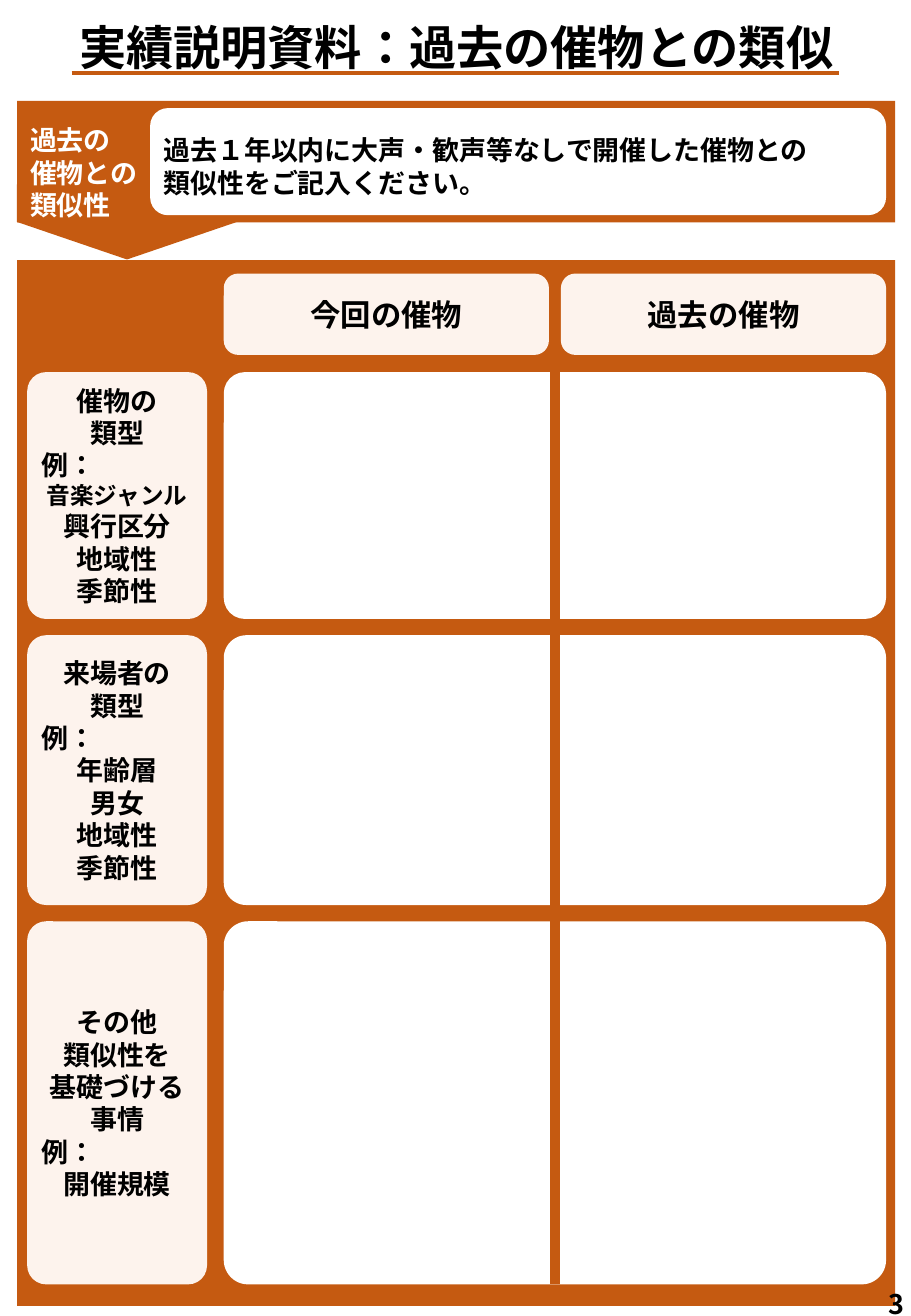
from lxml import etree
from pptx import Presentation
from pptx.dml.color import RGBColor
from pptx.enum.lang import MSO_LANGUAGE_ID
from pptx.enum.shapes import MSO_CONNECTOR, MSO_SHAPE
from pptx.enum.text import MSO_ANCHOR, MSO_AUTO_SIZE, PP_ALIGN
from pptx.oxml.ns import qn
from pptx.util import Cm, Pt

TITLE = "実績説明資料：過去の催物との類似"
BANNER_LABEL = ["過去の", "催物との", "類似性"]
BANNER_TEXT = ["過去１年以内に大声・歓声等なしで開催した催物との", "類似性をご記入ください。"]
HEADERS = ["今回の催物", "過去の催物"]
EXAMPLE = "例："
ROWS = [
    (5.16, 0.086, ["催物の", "類型", EXAMPLE, "音楽ジャンル", "興行区分", "地域性", "季節性"]),
    (5.64, 0.084, ["来場者の", "類型", EXAMPLE, "年齢層", "男女", "地域性", "季節性"]),
    (7.59, 0.067, ["その他", "類似性を", "基礎づける事情", EXAMPLE, "開催規模"]),
]
SMALLER = {"音楽ジャンル": 14}
PAGE = "3"

FONT = "Noto Sans CJK JP"
JAPANESE = MSO_LANGUAGE_ID.JAPANESE
ORANGE = RGBColor(0xC5, 0x5A, 0x11)
CREAM = RGBColor(0xFD, 0xF3, 0xED)
WHITE = RGBColor(0xFF, 0xFF, 0xFF)
BLACK = RGBColor(0, 0, 0)
RECT, ROUND, PENTAGON = MSO_SHAPE.RECTANGLE, MSO_SHAPE.ROUNDED_RECTANGLE, MSO_SHAPE.PENTAGON
STRAIGHT = MSO_CONNECTOR.STRAIGHT
NO_AUTOFIT = MSO_AUTO_SIZE.NONE
LEFT, CENTER = PP_ALIGN.LEFT, PP_ALIGN.CENTER
TOP, MIDDLE = MSO_ANCHOR.TOP, MSO_ANCHOR.MIDDLE

PANEL_X, PANEL_W = 0.36, 18.36
LABEL_X, LABEL_W = 0.57, 3.76
ANSWER_X, COLUMN_W, COLUMN_GAP = 4.68, 6.8, 0.25
ANSWER_W = 2 * COLUMN_W + COLUMN_GAP
ROWS_Y, ROW_GAP = 7.78, 0.34

prs = Presentation()
prs.slide_width, prs.slide_height = Cm(19.05), Cm(27.51)
s = prs.slides.add_slide(prs.slide_layouts[5])


def write(sp, lines, size=16, color=BLACK, align=LEFT, anchor=TOP, side=0.25, edge=0.13):
    tf = sp.text_frame
    tf.word_wrap = True
    tf.auto_size = NO_AUTOFIT
    tf.vertical_anchor = anchor
    tf.margin_left = Cm(side)
    tf.margin_right = Cm(min(side, 0.18))
    tf.margin_top = tf.margin_bottom = Cm(edge)
    for i, line in enumerate(lines):
        p = tf.paragraphs[0] if i == 0 else tf.add_paragraph()
        p.alignment = LEFT if line == EXAMPLE else align
        line_size = SMALLER.get(line, size)
        p.line_spacing = Pt(line_size * 1.2)
        r = p.add_run()
        r.text = line
        r.font.size, r.font.bold, r.font.name = Pt(line_size), True, FONT
        r.font.language_id = JAPANESE
        r.font.color.rgb = color
        ea = etree.SubElement(r._r.get_or_add_rPr(), qn("a:ea"))
        ea.set("typeface", FONT)


def block(kind, x, y, w, h, fill, adj=None):
    sp = s.shapes.add_shape(kind, Cm(x), Cm(y), Cm(w), Cm(h))
    sp.shadow.inherit = False
    sp.fill.solid()
    sp.fill.fore_color.rgb = fill
    sp.line.fill.background()
    if adj is not None:
        sp.adjustments[0] = adj
    return sp


def text_box(x, y, w, h):
    return s.shapes.add_textbox(Cm(x), Cm(y), Cm(w), Cm(h))


def rule(x1, y1, x2, y2, width):
    line = s.shapes.add_connector(STRAIGHT, Cm(x1), Cm(y1), Cm(x2), Cm(y2))
    line.line.color.rgb = ORANGE
    line.line.width = Pt(width)
    etree.SubElement(line._element.spPr, qn("a:effectLst"))


title = s.shapes.title
title.left, title.top, title.width, title.height = Cm(1.2), Cm(0.25), Cm(16.61), Cm(1.45)
write(title, [TITLE], size=28, align=CENTER)
rule(1.5, 1.52, 17.55, 1.52, 2.25)

block(PENTAGON, 1.87, 2.34, 1.57, 4.6, ORANGE).rotation = 90
block(RECT, PANEL_X, 2.11, PANEL_W, 2.54, ORANGE)
block(ROUND, 3.14, 2.26, 15.39, 2.24, WHITE)
write(text_box(0.38, 2.46, 2.9, 2.3), BANNER_LABEL, color=WHITE)
write(text_box(3.17, 2.67, 15.37, 1.63), BANNER_TEXT)

block(RECT, PANEL_X, 5.44, PANEL_W, 21.86, ORANGE)
for i, header in enumerate(HEADERS):
    sp = block(ROUND, ANSWER_X + i * (COLUMN_W + COLUMN_GAP), 5.72, COLUMN_W, 1.7, CREAM, 0.178)
    write(sp, [header], size=18, align=CENTER, anchor=MIDDLE, side=0.18, edge=0.1)

y = ROWS_Y
for height, corner, label in ROWS:
    sp = block(ROUND, LABEL_X, y, LABEL_W, height, CREAM, 0.105)
    write(sp, label, align=CENTER, anchor=MIDDLE, side=0.18, edge=0.1)
    block(ROUND, ANSWER_X, y, ANSWER_W, height, WHITE, corner)
    y += height + ROW_GAP

divider_x = ANSWER_X + ANSWER_W / 2
rule(divider_x, ROWS_Y, divider_x, y - ROW_GAP, 6)
write(text_box(18.34, 26.82, 0.71, 0.69), [PAGE], edge=0.1)

prs.save("out.pptx")
